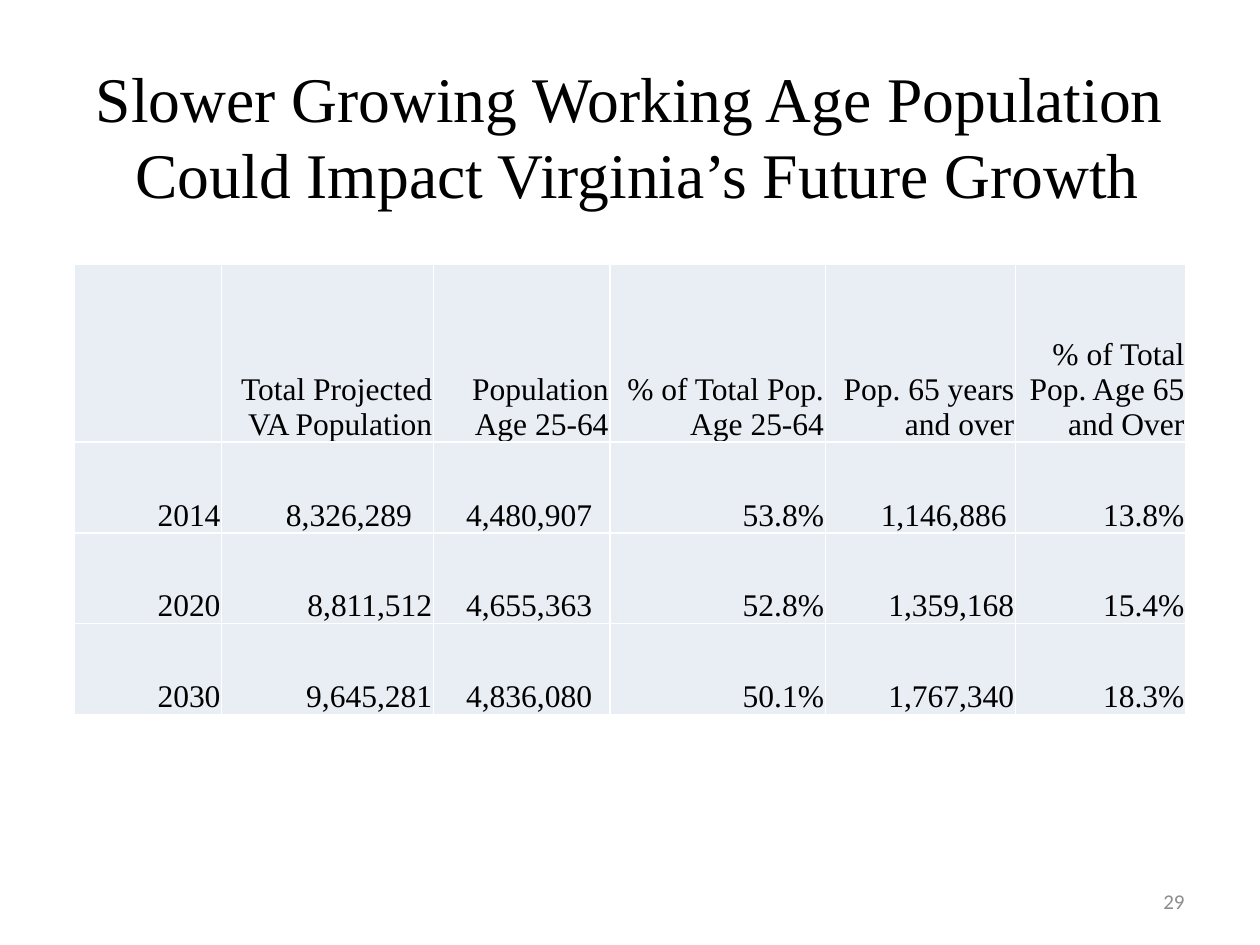
from lxml.etree import SubElement
from pptx import Presentation
from pptx.dml.color import RGBColor
from pptx.enum.text import MSO_ANCHOR as Anchor, PP_ALIGN as Align
from pptx.oxml.ns import qn
from pptx.util import Inches, Pt

WIDTH, HEIGHT = Inches(10), Inches(7.5)
COLORS = {"text": "000000", "number": "8C8C8C", "cell": "E9EDF4", "border": "FFFFFF"}
SERIF, SANS = "Times New Roman", "Calibri"

TITLE = "Slower Growing Working Age Population\n Could Impact Virginia’s Future Growth"
COLUMNS = [1.17, 1.68, 1.4, 1.71, 1.51, 1.35]
ROWS = [1.41, 0.72, 0.72, 0.72]
DATA = [
    ["", "Total Projected VA Population", "Population Age 25-64",
     "% of Total Pop. Age 25-64", "Pop. 65 years and over",
     "% of Total Pop. Age 65 and Over"],
    ["2014", "8,326,289", "4,480,907", "53.8%", "1,146,886", "13.8%"],
    ["2020", "8,811,512", "4,655,363", "52.8%", "1,359,168", "15.4%"],
    ["2030", "9,645,281", "4,836,080", "50.1%", "1,767,340", "18.3%"],
]
LEFT_INDENTS = {(1, 1): 0.51, (1, 2): 0.26, (2, 2): 0.26, (3, 2): 0.26}
RIGHT_INDENTS = {(1, 4): 0.07}


def format_text(frame, size, font, color, align):
    for para in frame.paragraphs:
        para.alignment = align
        para.font.size = Pt(size)
        for span in para.runs:
            span.font.size = Pt(size)
            span.font.name = font
            span.font.color.rgb = RGBColor.from_string(COLORS[color])


def add_text(page, text, left, top, width, height, size, font, color, align, anchor):
    box = page.shapes.add_textbox(
        int(left * WIDTH), int(top * HEIGHT), int(width * WIDTH), int(height * HEIGHT))
    frame = box.text_frame
    frame.word_wrap = True
    frame.vertical_anchor = anchor
    frame.text = text
    format_text(frame, size, font, color, align)
    return frame


def set_borders(cell):
    props = cell._tc.get_or_add_tcPr()
    for index, side in enumerate(("lnL", "lnR", "lnT", "lnB")):
        line = SubElement(props, qn(f"a:{side}"), w=str(Pt(1)))
        fill = SubElement(line, qn("a:solidFill"))
        SubElement(fill, qn("a:srgbClr"), val=COLORS["border"])
        props.remove(line)
        props.insert(index, line)


def fill_cell(cell, text, place):
    cell.fill.solid()
    cell.fill.fore_color.rgb = RGBColor.from_string(COLORS["cell"])
    cell.margin_left = Inches(LEFT_INDENTS.get(place, 0.01))
    cell.margin_right = Inches(RIGHT_INDENTS.get(place, 0.01))
    cell.margin_top, cell.margin_bottom = Inches(0.01), 0
    cell.vertical_anchor = Anchor.BOTTOM
    cell.text_frame.text = text
    align = Align.LEFT if place in LEFT_INDENTS else Align.RIGHT
    format_text(cell.text_frame, 18, SERIF, "text", align)
    set_borders(cell)


def add_population_table(page, left, top):
    table = page.shapes.add_table(
        len(ROWS), len(COLUMNS), int(left * WIDTH), int(top * HEIGHT),
        Inches(sum(COLUMNS)), Inches(sum(ROWS))).table
    table.first_row = table.horz_banding = False
    for column, width in zip(table.columns, COLUMNS):
        column.width = Inches(width)
    for row, height in zip(table.rows, ROWS):
        row.height = Inches(height)
    for r, values in enumerate(DATA):
        for c, text in enumerate(values):
            fill_cell(table.cell(r, c), text, (r, c))


def main():
    deck = Presentation()
    deck.slide_width, deck.slide_height = WIDTH, HEIGHT
    page = deck.slides.add_slide(deck.slide_layouts[6])
    title = add_text(page, TITLE, 0.05, 0.056, 0.9, 0.167,
                     36.3, SERIF, "text", Align.CENTER, Anchor.TOP)
    for para in title.paragraphs:
        para.line_spacing = Pt(43.5)
    add_population_table(page, 0.059, 0.28)
    add_text(page, "29", 0.717, 0.927, 0.233, 0.053,
             12, SANS, "number", Align.RIGHT, Anchor.MIDDLE)
    deck.save("out.pptx")


if __name__ == "__main__":
    main()
